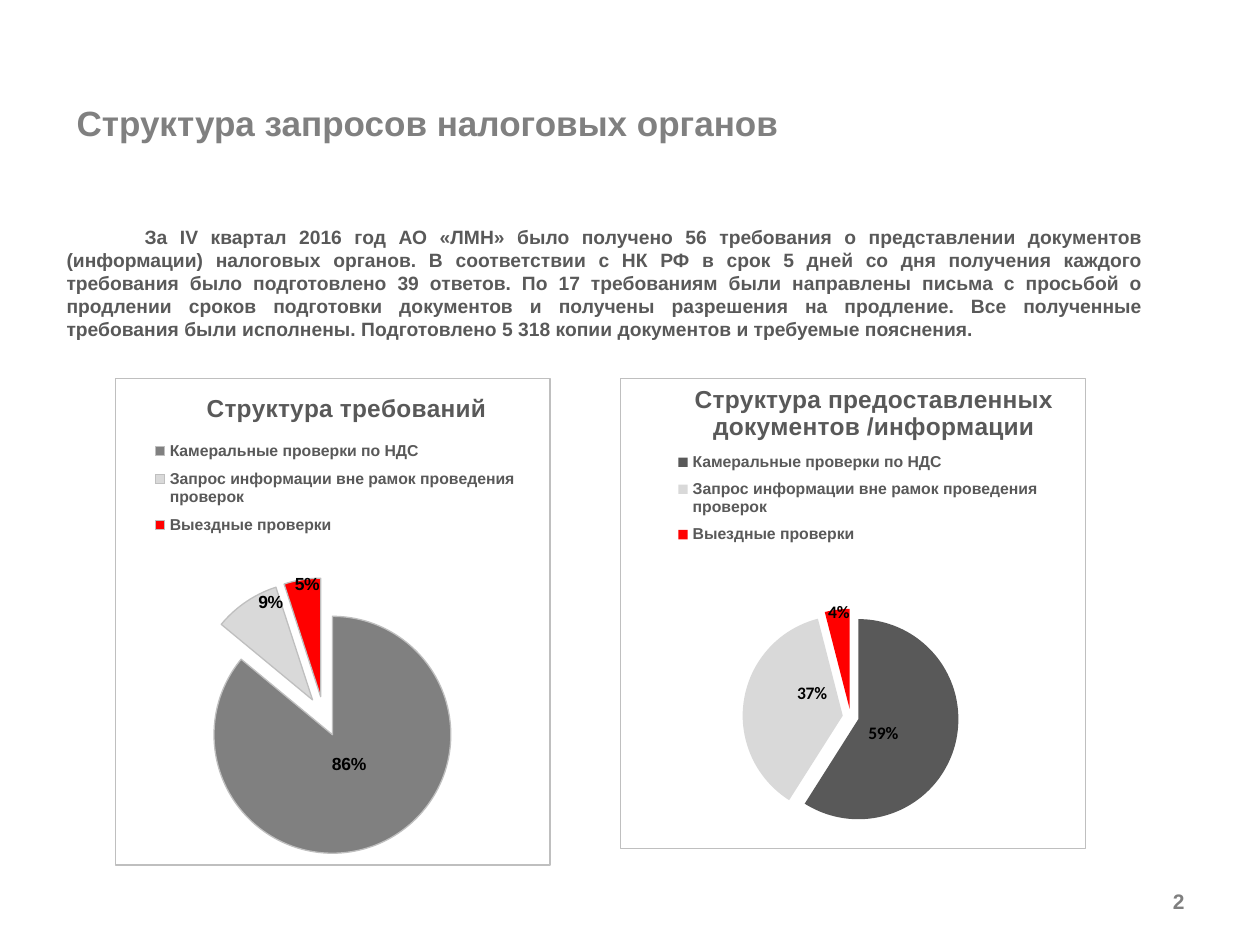
from lxml import etree
from pptx import Presentation, util as u
from pptx.chart.data import CategoryChartData
from pptx.dml.color import RGBColor
from pptx.enum import chart as ch, text as t
from pptx.oxml import parse_xml
from pptx.oxml.ns import nsdecls, qn

THEME = {
    "font": "Arial", "label_font": "Calibri",
    "title": "808080", "body": "595959", "page": "7F7F7F",
    "border": "BFBFBF", "label": "000000", "light": "D9D9D9", "accent": "FF0000",
    "title_pt": 20, "body_pt": 11, "page_pt": 12,
    "chart_title_pt": 14, "legend_pt": 9, "label_pt": 10,
}

deck = Presentation()
deck.slide_width, deck.slide_height = u.Inches(10), u.Inches(7.5)
slide = deck.slides.add_slide(deck.slide_layouts[6])


def style(font, size, color, name=THEME["font"]):
    for key, value in {"name": name, "size": u.Pt(size), "bold": True}.items():
        setattr(font, key, value)
    font.color.rgb = RGBColor.from_string(color)


def place(parent, after, mode, **shares):
    """Give a chart part a manual layout, right after the named child."""
    for old in parent.findall(qn("c:layout")):
        parent.remove(old)
    layout = parse_xml(f"<c:layout {nsdecls('c')}><c:manualLayout/></c:layout>")
    tags = {"layoutTarget": "inner"} if mode == "inner" else {}
    if mode != "offset":
        tags |= {"xMode": "edge", "yMode": "edge"}
    for tag, value in (tags | shares).items():
        etree.SubElement(layout[0], qn("c:" + tag)).set("val", str(value))
    if after:
        parent.find(qn(after)).addnext(layout)
    else:
        parent.insert(0, layout)


# Text blocks: left, top, width, height in percent of the slide
blocks = [
    ("Структура запросов налоговых органов", (5.1, 10.13, 87.4, 9.87),
     "title", t.PP_ALIGN.LEFT, t.MSO_ANCHOR.TOP, 0),
    ("За IV квартал 2016 год АО «ЛМН» было получено 56 требования о представлении "
     "документов (информации) налоговых органов. В соответствии с НК РФ в срок 5 дней "
     "со дня получения каждого требования было подготовлено 39 ответов. По 17 требованиям "
     "были направлены письма с просьбой о продлении сроков подготовки документов и получены "
     "разрешения на продление. Все полученные требования были исполнены. Подготовлено "
     "5 318 копии документов и требуемые пояснения.", (4.3, 21.6, 87.4, 16.67),
     "body", t.PP_ALIGN.JUSTIFY, t.MSO_ANCHOR.MIDDLE, 0.62),
    ("2", (71.7, 92.67, 23.3, 5.33),
     "page", t.PP_ALIGN.RIGHT, t.MSO_ANCHOR.MIDDLE, 0),
]
size_of_slide = (deck.slide_width, deck.slide_height) * 2
for wording, shares, role, align, anchor, indent in blocks:
    box = [int(s * full / 100) for s, full in zip(shares, size_of_slide)]
    frame = slide.shapes.add_textbox(*box).text_frame
    for key, value in {"word_wrap": True, "vertical_anchor": anchor}.items():
        setattr(frame, key, value)
    paragraph = frame.paragraphs[0]
    paragraph.alignment = align
    if indent:
        paragraph._p.get_or_add_pPr().set("indent", str(u.Inches(indent)))
    run = paragraph.add_run()
    run.text = wording
    style(run.font, THEME[role + "_pt"], THEME[role])

# Pie charts: places in percent of the slide, inner parts as shares of the chart
categories = ["Камеральные проверки по НДС",
              "Запрос информации вне рамок проведения проверок", "Выездные проверки"]
pies = [
    dict(title="Структура требований", values=(86, 9, 5), box=(9.1, 40, 34.6, 51.6),
         main=THEME["title"], outline=True, explode=17, label_font=THEME["font"],
         overlay=False, title_at=(0.2, 0.02), legend=(0.07, 0.11, 0.87, 0.23),
         plot=(0.02, 0.41, 0.92, 0.57),
         shifts=((-0.02, -0.05), (-0.02, -0.1), (-0.01, -0.11))),
    dict(title="Структура предоставленных документов /информации", values=(59, 37, 4),
         box=(49.2, 40, 37, 49.87), main=THEME["body"], outline=False, explode=8,
         label_font=THEME["label_font"], overlay=True, title_at=(0.15, 0),
         legend=(0.09, 0.14, 0.84, 0.23), plot=(0.08, 0.49, 0.83, 0.46),
         shifts=((-0.05, 0), (0.04, -0.03), (-0.01, -0.1))),
]
for pie in pies:
    data = CategoryChartData()
    data.categories = categories
    data.add_series("Series 1", pie["values"])
    box = [int(s * full / 100) for s, full in zip(pie["box"], size_of_slide)]
    chart = slide.shapes.add_chart(ch.XL_CHART_TYPE.PIE, *box, data).chart
    style(chart.font, THEME["label_pt"], THEME["body"])

    # Frame around the chart
    chart._chartSpace.find(qn("c:chart")).addnext(parse_xml(
        f'<c:spPr {nsdecls("c", "a")}><a:noFill/><a:ln w="9525"><a:solidFill>'
        f'<a:srgbClr val="{THEME["border"]}"/></a:solidFill></a:ln></c:spPr>'))

    # Chart title
    chart.has_title = True
    heading = chart.chart_title.text_frame.paragraphs[0]
    heading.alignment = t.PP_ALIGN.CENTER
    run = heading.add_run()
    run.text = pie["title"]
    style(run.font, THEME["chart_title_pt"], THEME["body"])
    place(chart.chart_title._element, "c:tx", "edge", **dict(zip("xy", pie["title_at"])))

    # Legend and plot area
    chart.has_legend = True
    chart.legend.position = ch.XL_LEGEND_POSITION.TOP
    chart.legend.include_in_layout = pie["overlay"]
    style(chart.legend.font, THEME["legend_pt"], THEME["body"])
    place(chart.legend._element, "c:legendPos", "edge", **dict(zip("xywh", pie["legend"])))
    place(chart._chartSpace.chart.plotArea, None, "inner", **dict(zip("xywh", pie["plot"])))

    # Slices and their labels
    plot = chart.plots[0]
    plot.vary_by_categories = True
    slices = plot.series[0]
    colors = (pie["main"], THEME["light"], THEME["accent"])
    for i, color in enumerate(colors):
        point = slices.points[i]
        point.format.fill.solid()
        point.format.fill.fore_color.rgb = RGBColor.from_string(color)
        if pie["outline"]:
            point.format.line.color.rgb = RGBColor.from_string(THEME["border"])
            point.format.line.width = u.Pt(0.75)
        else:
            point.format.line.fill.background()
        style(point.data_label.font, THEME["label_pt"], THEME["label"], pie["label_font"])
        point.data_label.position = ch.XL_LABEL_POSITION.CENTER

    labels = slices.data_labels
    for key, value in {"show_value": False, "show_percentage": True,
                       "position": ch.XL_LABEL_POSITION.CENTER}.items():
        setattr(labels, key, value)
    style(labels.font, THEME["label_pt"], THEME["label"], pie["label_font"])
    for label, shift in zip(labels._element.findall(qn("c:dLbl")), pie["shifts"]):
        label.find(qn("c:showVal")).set("val", "0")
        label.find(qn("c:showPercent")).set("val", "1")
        place(label, "c:idx", "offset", **dict(zip("xy", shift)))

    explosion = parse_xml(f'<c:explosion {nsdecls("c")} val="{pie["explode"]}"/>')
    slices._element.find(qn("c:dPt")).addprevious(explosion)

deck.save("out.pptx")
